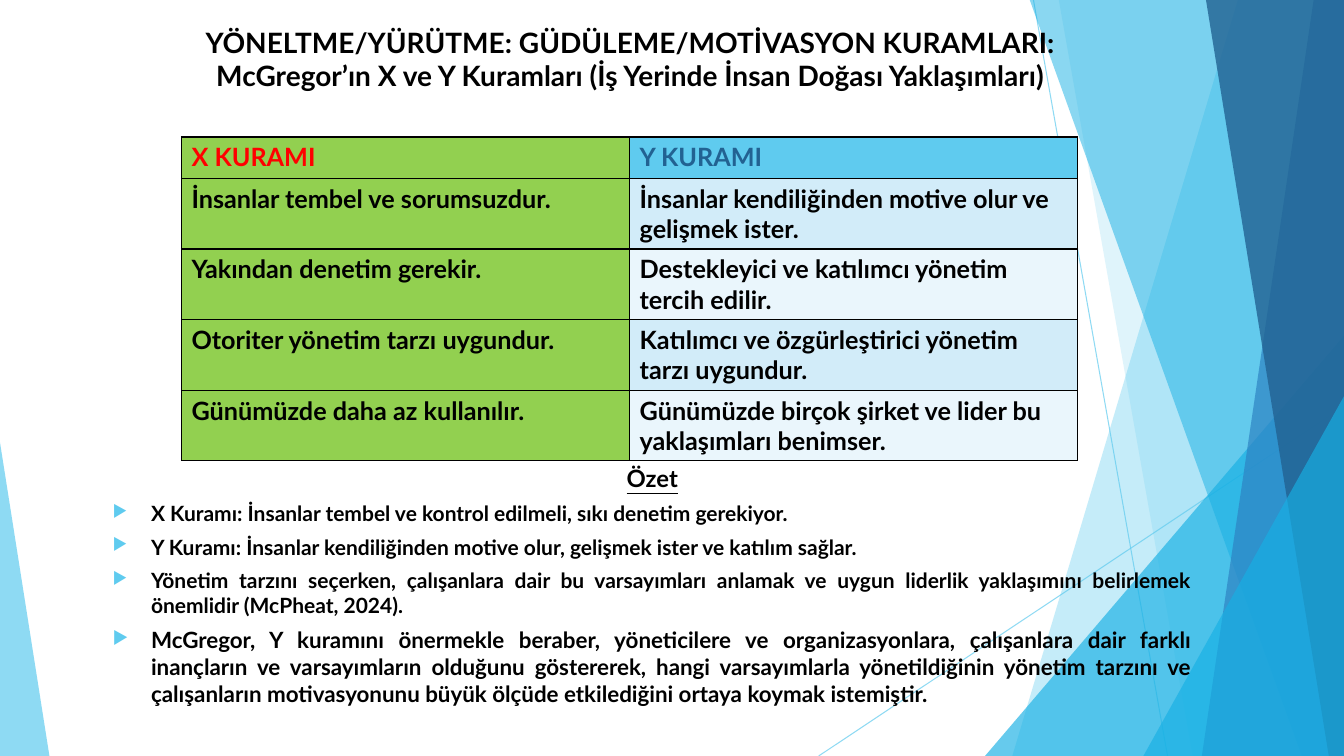
from lxml import etree
from pptx import Presentation
from pptx.dml.color import RGBColor
from pptx.enum import shapes, text
from pptx.oxml.ns import qn
from pptx.util import Inches, Pt

FONT = "Lato"
BLACK = RGBColor(0x00, 0x00, 0x00)
RED = RGBColor(0xFF, 0x00, 0x00)
SKY = RGBColor(0x5F, 0xCB, 0xEF)
CYAN = RGBColor(0x17, 0xB0, 0xE4)
BLUE = RGBColor(0x2E, 0x83, 0xC3)
NAVY = RGBColor(0x22, 0x62, 0x92)
GREEN = RGBColor(0x92, 0xD0, 0x50)
PALE = RGBColor(0xD2, 0xEC, 0xF9)
PALER = RGBColor(0xEA, 0xF6, 0xFC)

WIDTH, HEIGHT = 13.33, 7.5
BAND_TOP = -0.01

RAYS = [((10.25, 0), (11.58, HEIGHT)), ((WIDTH, 4.03), (8.12, HEIGHT))]
# Each entry: kind, geometry, colour, opacity
FACETS = [
    ("band", (12.28, 10.04), SKY, 36),
    ("band", (10.5, 11.83), SKY, 20),
    ("triangle", (9.77, 3.33, 3.56, 4.17, 1), CYAN, 66),
    ("band", (10.21, 12.91), CYAN, 50),
    ("band", (13.03, 11.92), BLUE, 70),
    ("band", (11.96, 13.18), NAVY, 80),
    ("triangle", (11.34, 3.93, 1.99, 3.57, 1), CYAN, 66),
    ("triangle", (0, 4.39, 0.49, 3.11, 0), SKY, 70),
]

TITLE = ("YÖNELTME/YÜRÜTME: GÜDÜLEME/MOTİVASYON KURAMLARI: "
         "McGregor’ın X ve Y Kuramları (İş Yerinde İnsan Doğası Yaklaşımları)")
THEORIES = [
    ("X KURAMI", "Y KURAMI"),
    ("İnsanlar tembel ve sorumsuzdur.",
     "İnsanlar kendiliğinden motive olur ve gelişmek ister."),
    ("Yakından denetim gerekir.",
     "Destekleyici ve katılımcı yönetim tercih edilir."),
    ("Otoriter yönetim tarzı uygundur.",
     "Katılımcı ve özgürleştirici yönetim tarzı uygundur."),
    ("Günümüzde daha az kullanılır.",
     "Günümüzde birçok şirket ve lider bu yaklaşımları benimser."),
]
SUMMARY_HEADING = "Özet"
SUMMARY = [
    ("X Kuramı: İnsanlar tembel ve kontrol edilmeli, sıkı denetim gerekiyor.", 15),
    ("Y Kuramı: İnsanlar kendiliğinden motive olur, gelişmek ister ve katılım sağlar.", 15),
    ("Yönetim tarzını seçerken, çalışanlara dair bu varsayımları anlamak ve uygun "
     "liderlik yaklaşımını belirlemek önemlidir (McPheat, 2024).", 15),
    ("McGregor, Y kuramını önermekle beraber, yöneticilere ve organizasyonlara, "
     "çalışanlara dair farklı inançların ve varsayımların olduğunu göstererek, hangi "
     "varsayımlarla yönetildiğinin yönetim tarzını ve çalışanların motivasyonunu büyük "
     "ölçüde etkilediğini ortaya koymak istemiştir.", 16),
]


def set_opacity(part, percent):
    for colour in part._element.spPr.iter(qn("a:srgbClr")):
        etree.SubElement(colour, qn("a:alpha"), val=str(percent * 1000))


def add_ray(slide, start, end):
    ray = slide.shapes.add_connector(
        shapes.MSO_CONNECTOR.STRAIGHT, *map(Inches, start + end))
    ray.line.color.rgb = SKY
    ray.line.width = Pt(0.75)
    set_opacity(ray, 70)
    etree.SubElement(ray._element.spPr, qn("a:effectLst"))


def add_facet(slide, kind, geometry, colour, opacity):
    if kind == "band":
        top_x, bottom_x = geometry
        corners = [(top_x, BAND_TOP), (WIDTH, BAND_TOP), (WIDTH, HEIGHT), (bottom_x, HEIGHT)]
        points = [(Inches(x), Inches(y)) for x, y in corners]
        outline = slide.shapes.build_freeform(*points[0], scale=1.0)
        outline.add_line_segments(points[1:], close=True)
        facet = outline.convert_to_shape()
    else:
        *box, apex = geometry
        facet = slide.shapes.add_shape(
            shapes.MSO_SHAPE.ISOSCELES_TRIANGLE, *map(Inches, box))
        facet.adjustments[0] = apex
    facet.shadow.inherit = False
    facet.fill.solid()
    facet.fill.fore_color.rgb = colour
    facet.line.fill.background()
    set_opacity(facet, opacity)


def add_run(paragraph, words, size, colour=BLACK, underline=False):
    run = paragraph.add_run()
    run.text = words
    run.font.name = FONT
    run.font.size = Pt(size)
    run.font.bold = True
    run.font.color.rgb = colour
    if underline:
        run.font.underline = True


def add_frame(slide, *box):
    frame = slide.shapes.add_textbox(*map(Inches, box)).text_frame
    frame.word_wrap = True
    return frame


def add_bullet(paragraph):
    props = paragraph._p.get_or_add_pPr()
    props.set("marL", str(Inches(0.38)))
    props.set("indent", str(Inches(-0.38)))
    tint = etree.SubElement(props, qn("a:buClr"))
    etree.SubElement(tint, qn("a:srgbClr"), val=str(SKY))
    etree.SubElement(props, qn("a:buSzPct"), val="80000")
    etree.SubElement(props, qn("a:buChar"), char="▶")


def add_borders(cell):
    props = cell._tc.get_or_add_tcPr()
    for side in ("lnL", "lnR", "lnT", "lnB"):
        edge = etree.SubElement(props, qn(f"a:{side}"), w=str(Pt(1)))
        paint = etree.SubElement(edge, qn("a:solidFill"))
        etree.SubElement(paint, qn("a:srgbClr"), val=str(BLACK))


def cell_colours(row, column):
    if row == 0:
        return (GREEN, RED) if column == 0 else (SKY, NAVY)
    if column == 0:
        return GREEN, BLACK
    return (PALE if row % 2 else PALER), BLACK


def add_theories(slide):
    row_heights = [0.41] + [0.7] * (len(THEORIES) - 1)
    table = slide.shapes.add_table(
        len(THEORIES), 2, Inches(1.8), Inches(1.36),
        Inches(8.89), Inches(sum(row_heights))).table
    for row, (statements, height) in enumerate(zip(THEORIES, row_heights)):
        table.rows[row].height = Inches(height)
        for column, statement in enumerate(statements):
            cell = table.cell(row, column)
            background, ink = cell_colours(row, column)
            add_borders(cell)
            cell.fill.solid()
            cell.fill.fore_color.rgb = background
            add_run(cell.text_frame.paragraphs[0], statement, 18, ink)


def add_summary(slide):
    frame = add_frame(slide, 1.02, 4.55, 10.9, 2.56)
    heading = frame.paragraphs[0]
    heading.alignment = text.PP_ALIGN.CENTER
    add_run(heading, SUMMARY_HEADING, 17, underline=True)
    for point, size in SUMMARY:
        paragraph = frame.add_paragraph()
        add_bullet(paragraph)
        paragraph.alignment = text.PP_ALIGN.JUSTIFY
        paragraph.space_before = Pt(6)
        add_run(paragraph, point, size)


def main():
    deck = Presentation()
    deck.slide_width, deck.slide_height = Inches(WIDTH), Inches(HEIGHT)
    slide = deck.slides.add_slide(deck.slide_layouts[6])
    for start, end in RAYS:
        add_ray(slide, start, end)
    for facet in FACETS:
        add_facet(slide, *facet)
    title = add_frame(slide, 1.59, 0.2, 9.32, 0.78).paragraphs[0]
    title.alignment = text.PP_ALIGN.CENTER
    add_run(title, TITLE, 20)
    add_summary(slide)
    add_theories(slide)
    deck.save("out.pptx")


if __name__ == "__main__":
    main()
